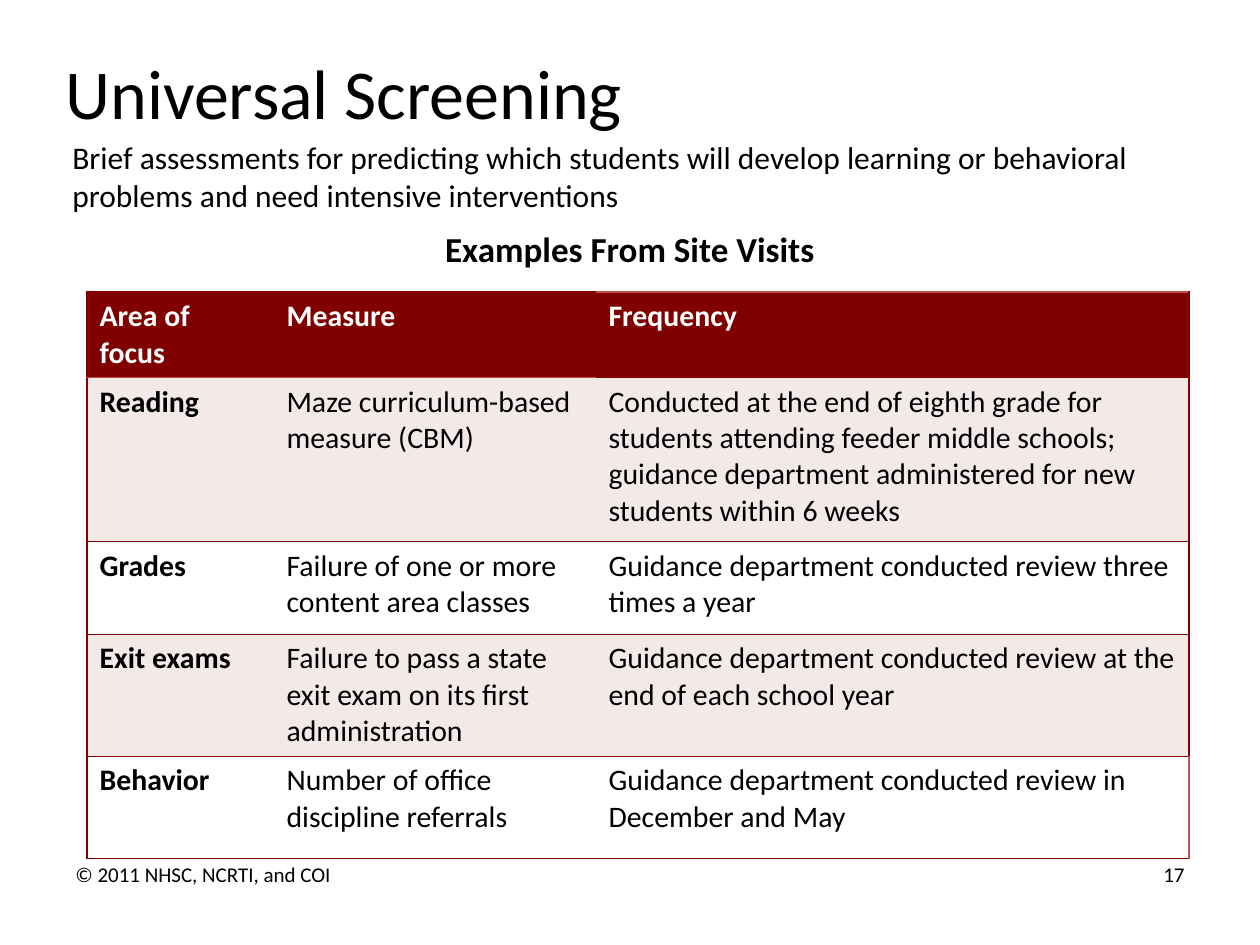
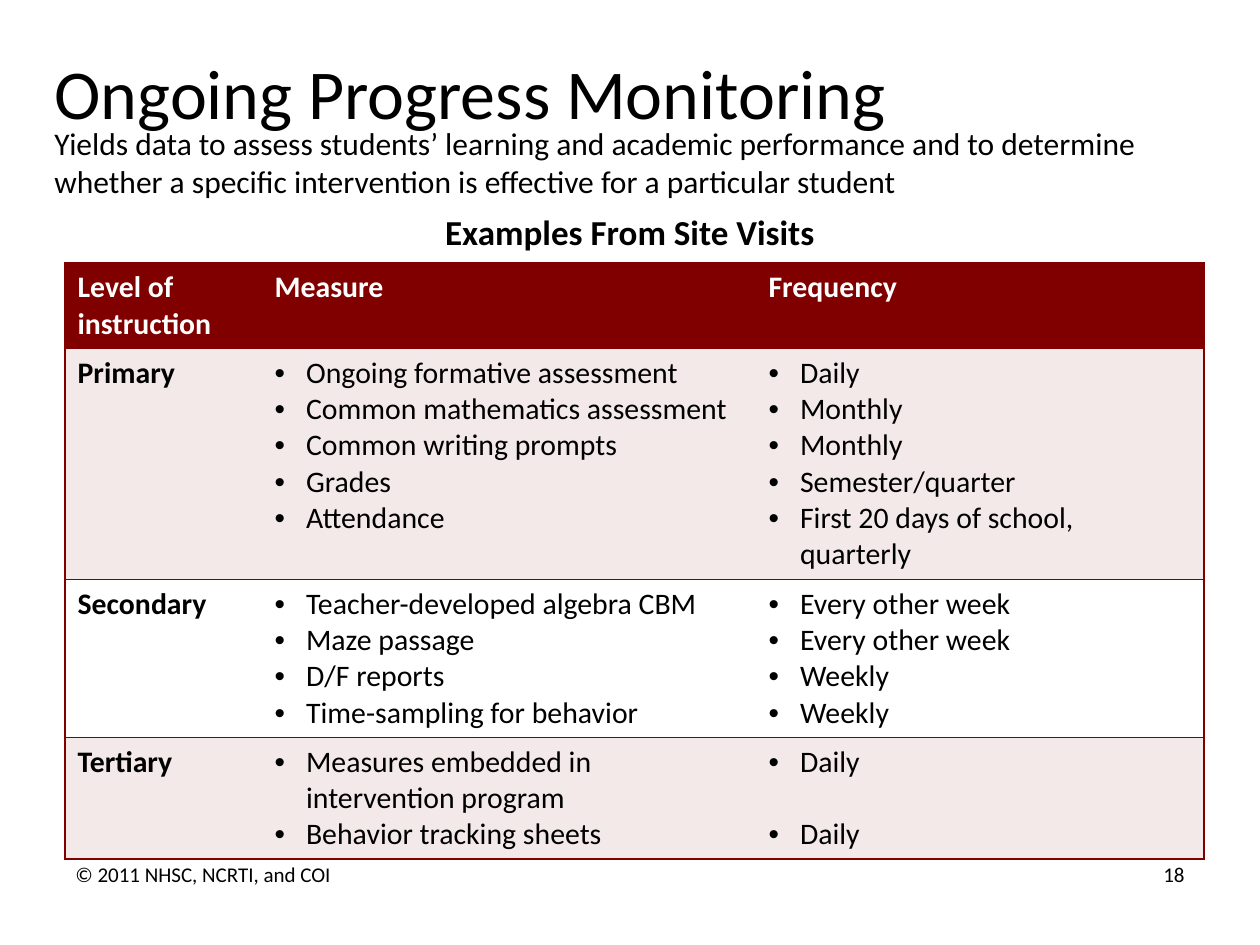
from lxml import etree
from pptx import Presentation
from pptx import util as u
from pptx.dml.color import RGBColor
from pptx.enum import text as t
from pptx.oxml.ns import qn

FACE = "Calibri"
BLACK = RGBColor(0, 0, 0)
WHITE = RGBColor(255, 255, 255)
MAROON = RGBColor(0x80, 0, 0)
RED = RGBColor(0xC0, 0x50, 0x4D)
BLUSH = RGBColor(0xF3, 0xE9, 0xE9)

HEAD = "Examples From Site Visits"
FOOT = "© 2011 NHSC, NCRTI, and COI"
LINE = 20.75  # height of one table text line, in points

# Boxes are left, top, width, height in px. A cell holding a list is bulleted;
# a pair in it is a text and the space before it in points.
# "red" holds the row, column and side of the lighter table edges.
SLIDES = [
    dict(
        title="Universal Screening", title_box=(53, 38, 1081, 106),
        lead="Brief assessments for predicting which students will develop "
             "learning or behavioral problems and need intensive interventions",
        lead_box=(60, 132, 1159, 89), head_top=221, page="17",
        corner=(87, 292), cols=(187, 322, 593), rows=(85, 164, 93, 122, 102),
        red={(0, 0, "B"), (0, 1, "B"), (0, 2, "T"),
             (1, 0, "T"), (1, 1, "T"), (4, 2, "R")},
        cells=[
            ("Area of focus", "Measure", "Frequency"),
            ("Reading", "Maze curriculum-based measure (CBM)",
             "Conducted at the end of eighth grade for students attending "
             "feeder middle schools; guidance department administered for "
             "new students within 6 weeks"),
            ("Grades", "Failure of one or more content area classes",
             "Guidance department conducted review three times a year"),
            ("Exit exams",
             "Failure to pass a state exit exam on its first administration",
             "Guidance department conducted review at the end of each "
             "school year"),
            ("Behavior", "Number of office discipline referrals",
             "Guidance department conducted review in December and May"),
        ],
    ),
    dict(
        title="Ongoing Progress Monitoring", title_box=(42, 49, 1134, 84),
        lead="Yields data to assess students’ learning and academic "
             "performance and to determine whether a specific intervention "
             "is effective for a particular student",
        lead_box=(42, 118, 1155, 89), head_top=204, page="18",
        corner=(65, 263), cols=(197, 494, 448), rows=(85, 231, 158, 121),
        red=set(),
        cells=[
            ("Level of instruction", "Measure", "Frequency"),
            ("Primary",
             ["Ongoing formative assessment", "Common mathematics assessment",
              "Common writing prompts", "Grades", "Attendance"],
             ["Daily", "Monthly", "Monthly", "Semester/quarter",
              "First 20 days of school, quarterly"]),
            ("Secondary",
             ["Teacher-developed algebra CBM", "Maze passage", "D/F reports",
              "Time-sampling for behavior"],
             ["Every other week", "Every other week", "Weekly", "Weekly"]),
            ("Tertiary",
             ["Measures embedded in intervention program",
              "Behavior tracking sheets"],
             ["Daily", ("Daily", LINE)]),
        ],
    ),
]


def px(n):
    return u.Emu(round(n * 914400 / 126))


def style(para, size, color=BLACK, bold=False):
    font = para.font
    font.name, font.size, font.bold = FACE, u.Pt(size), bold
    font.color.rgb = color


def write(slide, box, words, size, align=t.PP_ALIGN.LEFT, bold=False,
          anchor=t.MSO_ANCHOR.TOP):
    frame = slide.shapes.add_textbox(*map(px, box)).text_frame
    frame.word_wrap = True
    frame.vertical_anchor = anchor
    para = frame.paragraphs[0]
    para.text, para.alignment = words, align
    style(para, size, bold=bold)


def bullet(para):
    props = para._p.get_or_add_pPr()
    props.set("marL", str(u.Inches(0.25)))
    props.set("indent", str(-u.Inches(0.25)))
    etree.SubElement(props, qn("a:buFont"), typeface="Arial")
    etree.SubElement(props, qn("a:buChar"), char="•")


def edge(cell, side, color):
    """Draw one cell border, or clear it when color is None."""
    line = etree.SubElement(cell._tc.get_or_add_tcPr(), qn("a:ln" + side),
                            w=str(u.Pt(1)))
    if color is None:
        etree.SubElement(line, qn("a:noFill"))
    else:
        fill = etree.SubElement(line, qn("a:solidFill"))
        etree.SubElement(fill, qn("a:srgbClr"), val=str(color))


def fill_cell(cell, item, row, col):
    listed = isinstance(item, list)
    frame = cell.text_frame
    for i, part in enumerate(item if listed else [item]):
        words, gap = part if isinstance(part, tuple) else (part, 0)
        para = frame.paragraphs[0] if i == 0 else frame.add_paragraph()
        para.text = words
        if gap:
            para.space_before = u.Pt(gap)
        if listed:
            bullet(para)
        style(para, 17, BLACK if row else WHITE, row == 0 or col == 0)


def add_grid(slide, data):
    cols, rows = data["cols"], data["rows"]
    box = (*data["corner"], sum(cols), sum(rows))
    grid = slide.shapes.add_table(len(rows), len(cols), *map(px, box)).table
    grid.first_row = grid.horz_banding = False
    for col, width in zip(grid.columns, cols):
        col.width = px(width)
    for row, height in zip(grid.rows, rows):
        row.height = px(height)
    for r, items in enumerate(data["cells"]):
        for c, item in enumerate(items):
            cell = grid.cell(r, c)
            shown = {"L": c == 0, "R": c == len(cols) - 1, "T": True, "B": True}
            for side, drawn in shown.items():
                color = RED if (r, c, side) in data["red"] else MAROON
                edge(cell, side, color if drawn else None)
            cell.fill.solid()
            cell.fill.fore_color.rgb = (
                MAROON if r == 0 else BLUSH if r % 2 else WHITE)
            fill_cell(cell, item, r, c)


def add_title(slide, words, box):
    title = slide.shapes.title
    title.left, title.top, title.width, title.height = map(px, box)
    frame = title.text_frame
    frame.vertical_anchor = t.MSO_ANCHOR.MIDDLE
    para = frame.paragraphs[0]
    para.text, para.alignment = words, t.PP_ALIGN.LEFT
    style(para, 40)


def add_foot(slide, page):
    mid = t.MSO_ANCHOR.MIDDLE
    write(slide, (903, 849, 294, 50), page, 12, t.PP_ALIGN.RIGHT, anchor=mid)
    write(slide, (63, 849, 399, 50), FOOT, 12, anchor=mid)


def main():
    deck = Presentation()
    deck.slide_width, deck.slide_height = px(1260), px(945)
    for data in SLIDES:
        slide = deck.slides.add_slide(deck.slide_layouts[5])
        add_title(slide, data["title"], data["title_box"])
        add_grid(slide, data)
        write(slide, (0, data["head_top"], 1260, 54), HEAD, 20,
              t.PP_ALIGN.CENTER, bold=True)
        write(slide, data["lead_box"], data["lead"], 18)
        add_foot(slide, data["page"])
    deck.save("out.pptx")


if __name__ == "__main__":
    main()
